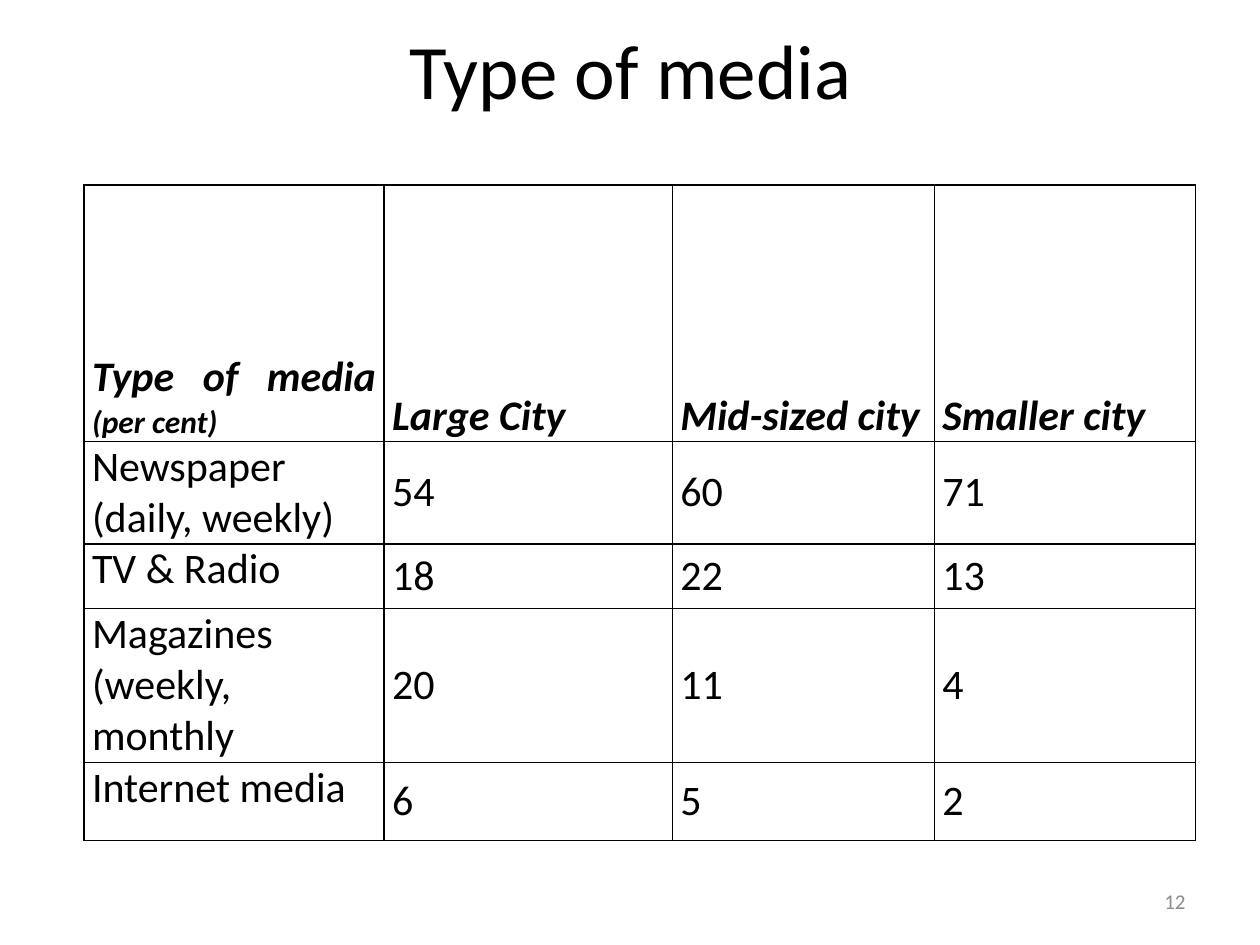
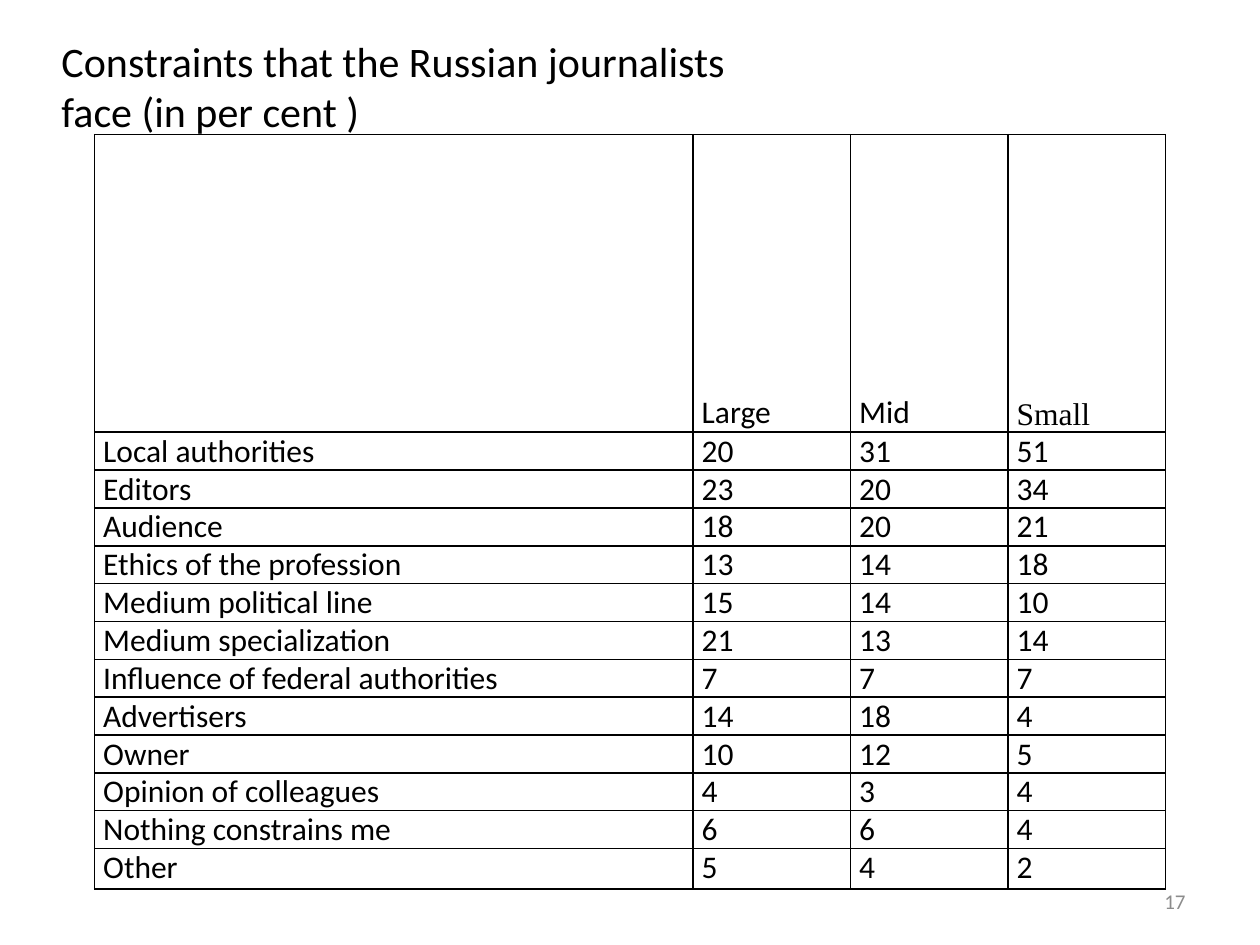
from lxml import etree
from pptx import Presentation
from pptx.dml.color import RGBColor
from pptx.enum.text import MSO_ANCHOR, PP_ALIGN
from pptx.oxml.ns import qn
from pptx.util import Pt

LEFT, CENTER, RIGHT, JUSTIFY = PP_ALIGN.LEFT, PP_ALIGN.CENTER, PP_ALIGN.RIGHT, PP_ALIGN.JUSTIFY
TOP, MIDDLE, BOTTOM = MSO_ANCHOR.TOP, MSO_ANCHOR.MIDDLE, MSO_ANCHOR.BOTTOM
BLACK = RGBColor(0x00, 0x00, 0x00)
WHITE = RGBColor(0xFF, 0xFF, 0xFF)
GREY = RGBColor(0x8C, 0x8C, 0x8C)
BODY_FONT, SERIF_FONT = "Calibri", "Times New Roman"
PAGE_SIZE = (720, 540)
NUMBER_BOX = (516.5, 500.5, 168, 28.75)
BLANK_LAYOUT = 6

MEDIA_ROWS = [
    ("Type of media ", "Large City", "Mid-sized city", "Smaller city"),
    ("Newspaper (daily, weekly) ", 54, 60, 71),
    ("TV & Radio ", 18, 22, 13),
    ("Magazines (weekly, monthly", 20, 11, 4),
    ("Internet media", 6, 5, 2),
]
CONSTRAINT_ROWS = [
    ("", "Large", "Mid", "Small "),
    ("Local authorities", 20, 31, 51),
    ("Editors", 23, 20, 34),
    ("Audience", 18, 20, 21),
    ("Ethics of the profession", 13, 14, 18),
    ("Medium political line", 15, 14, 10),
    ("Medium specialization", 21, 13, 14),
    ("Influence of federal authorities", 7, 7, 7),
    ("Advertisers", 14, 18, 4),
    ("Owner", 10, 12, 5),
    ("Opinion of colleagues", 4, 3, 4),
    ("Nothing constrains me", 6, 6, 4),
    ("Other", 5, 4, 2),
]


def add_span(para, text, size=24, font=BODY_FONT, color=BLACK, bold=False, italic=False):
    span = para.add_run()
    span.text = str(text)
    span.font.size = Pt(size)
    span.font.name = font
    span.font.color.rgb = color
    span.font.bold = bold
    span.font.italic = italic


def add_text(page, area, text, align=LEFT, anchor=TOP, **style):
    box = page.shapes.add_textbox(*map(Pt, area))
    frame = box.text_frame
    frame.word_wrap = True
    frame.vertical_anchor = anchor
    para = frame.paragraphs[0]
    para.alignment = align
    add_span(para, text, **style)


def add_borders(cell):
    properties = cell._tc.get_or_add_tcPr()
    for position, side in enumerate(("lnL", "lnR", "lnT", "lnB")):
        line = etree.Element(qn(f"a:{side}"), w=str(Pt(1)))
        fill = etree.SubElement(line, qn("a:solidFill"))
        etree.SubElement(fill, qn("a:srgbClr"), val=str(BLACK))
        properties.insert(position, line)


def add_grid(page, corner, rows, widths, heights, size, inset, value_anchor, fill=None, emphasis=False):
    area = (*corner, sum(widths), sum(heights))
    table = page.shapes.add_table(len(rows), len(widths), *map(Pt, area)).table
    table.first_row = table.horz_banding = False
    for column, width in zip(table.columns, widths):
        column.width = Pt(width)
    for row, height in zip(table.rows, heights):
        row.height = Pt(height)
    for r, values in enumerate(rows):
        for c, value in enumerate(values):
            cell = table.cell(r, c)
            cell.margin_left = cell.margin_right = Pt(inset)
            cell.margin_top = cell.margin_bottom = 0
            cell.vertical_anchor = BOTTOM if r == 0 else value_anchor if c else TOP
            if fill is None:
                cell.fill.background()
            else:
                cell.fill.solid()
                cell.fill.fore_color.rgb = fill
            add_borders(cell)
            para = cell.text_frame.paragraphs[0]
            para.alignment = JUSTIFY
            strong = emphasis and r == 0
            font = SERIF_FONT if value == "Small " else BODY_FONT
            if value != "":
                add_span(para, value, size=size, font=font, bold=strong, italic=strong)
    return table


def add_page(deck, number):
    page = deck.slides.add_slide(deck.slide_layouts[BLANK_LAYOUT])
    add_text(page, NUMBER_BOX, number, align=RIGHT, anchor=MIDDLE, size=12, color=GREY)
    return page


def build_media_page(deck):
    page = add_page(deck, 12)
    table = add_grid(page, (48, 105.75), MEDIA_ROWS, (171.5, 164.75, 149.75, 149.25),
                     (146.5, 58.5, 37, 88, 44.5), size=24, inset=4.6,
                     value_anchor=MIDDLE, fill=WHITE, emphasis=True)
    unit_para = table.cell(0, 0).text_frame.paragraphs[0]
    add_span(unit_para, "(per cent)", size=18, bold=True, italic=True)
    add_text(page, (36.5, 9.5, 648, 90), "Type of media", align=CENTER, size=44)


def build_constraints_page(deck):
    page = add_page(deck, 17)
    middle_rows = len(CONSTRAINT_ROWS) - 2
    add_grid(page, (54, 77), CONSTRAINT_ROWS, (342, 90, 90, 90),
             (170, *[21.6] * middle_rows, 23), size=18, inset=5, value_anchor=TOP)
    add_text(page, (28, 16.5, 433.5, 65),
             "Constraints that the Russian journalists face (in per cent )")


def main():
    deck = Presentation()
    deck.slide_width, deck.slide_height = map(Pt, PAGE_SIZE)
    build_media_page(deck)
    build_constraints_page(deck)
    deck.save("out.pptx")


if __name__ == "__main__":
    main()
